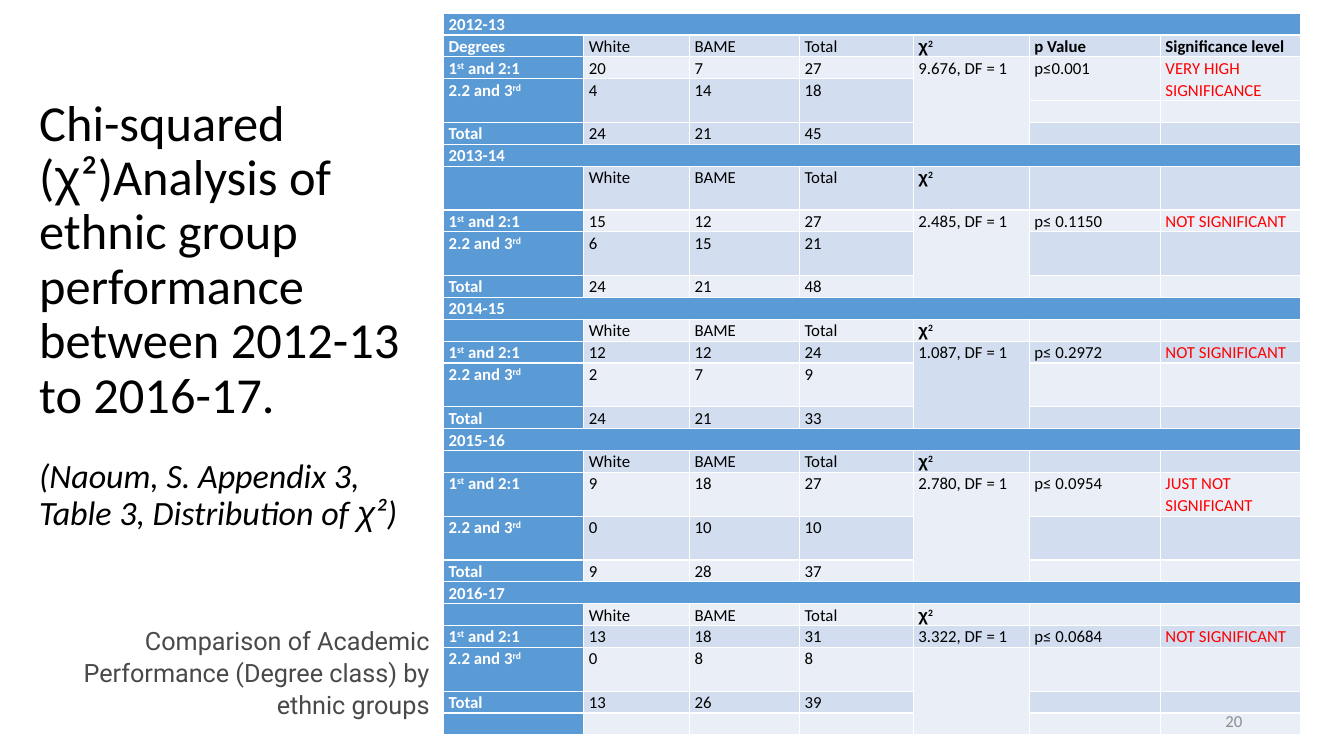
from dataclasses import dataclass
from typing import Any

from pptx import Presentation
from pptx import util as u
from pptx.dml.color import RGBColor
from pptx.enum import text

WHITE = RGBColor(0xFF, 0xFF, 0xFF)
BLACK = RGBColor(0x00, 0x00, 0x00)
BLUE = RGBColor(0x5B, 0x9B, 0xD5)
PALE = RGBColor(0xEA, 0xEF, 0xF7)
SOFT = RGBColor(0xD2, 0xDE, 0xEF)
RED = RGBColor(0xFF, 0x00, 0x00)
GREY = RGBColor(0x8C, 0x8C, 0x8C)
DARK = RGBColor(0x49, 0x49, 0x49)

WIDTHS = [1.39, 1.05, 1.09, 1.13, 1.15, 1.3, 1.39]
TALL = {7, 9, 14, 18, 19, 24}  # rows two lines high
HEIGHT = 7.17
GROUPS = ["White", "BAME", "Total"]
CHI = "χ^2"


@dataclass
class Style:
    size: float
    color: RGBColor
    face: str = "Calibri"
    bold: bool = False
    slant: bool = False
    space: float = 1.07
    align: Any = text.PP_ALIGN.LEFT


@dataclass
class Year:
    name: str
    high: list[int]
    low: list[int]
    total: list[int]
    chi: str
    prob: str
    level: str


YEARS = [
    Year("2012-13", [20, 7, 27], [4, 14, 18], [24, 21, 45],
         "9.676, DF = 1", "p≤0.001", "VERY HIGH SIGNIFICANCE"),
    Year("2013-14", [15, 12, 27], [6, 15, 21], [24, 21, 48],
         "2.485, DF = 1", "p≤ 0.1150", "NOT SIGNIFICANT"),
    Year("2014-15", [12, 12, 24], [2, 7, 9], [24, 21, 33],
         "1.087, DF = 1", "p≤ 0.2972", "NOT SIGNIFICANT"),
    Year("2015-16", [9, 18, 27], [0, 10, 10], [9, 28, 37],
         "2.780, DF = 1", "p≤ 0.0954", "JUST NOT SIGNIFICANT"),
    Year("2016-17", [13, 18, 31], [0, 8, 8], [13, 26, 39],
         "3.322, DF = 1", "p≤ 0.0684", "NOT SIGNIFICANT"),
]


def write(para: Any, words: str, style: Style) -> None:
    """Write words; ^...^ marks superscript, and χ is set in Arial."""
    para.alignment, para.line_spacing = style.align, style.space
    font = para.font
    font.size, font.name = u.Pt(style.size), style.face
    font.bold, font.italic = style.bold, style.slant
    font.color.rgb = style.color
    for i, part in enumerate(words.split("^")):
        for piece in part.replace("χ", "|χ|").split("|"):
            if not piece:
                continue
            run = para.add_run()
            run.text = piece
            if piece == "χ":
                run.font.name = "Arial"
            if i % 2:
                run.font._element.set("baseline", "30000")
    if not words:
        para._p.get_or_add_endParaRPr().set("sz", str(int(style.size * 100)))


def add_box(slide: Any, left: float, top: float, wide: float, high: float,
            anchor: Any) -> Any:
    box = slide.shapes.add_textbox(*map(u.Inches, (left, top, wide, high)))
    frame = box.text_frame
    frame.word_wrap, frame.vertical_anchor = True, anchor
    return frame


def list_rows() -> tuple[list[list[str]], list[tuple[int, int, int, int]]]:
    """Return the table rows and the merges (top, left, bottom, right)."""
    rows: list[list[str]] = []
    spans: list[tuple[int, int, int, int]] = []
    for year in YEARS:
        top = len(rows)
        first, last = year is YEARS[0], year is YEARS[-1]
        spans.append((top, 0, top, 6))
        rows.append([year.name])
        rows.append(["Degrees" if first else "", *GROUPS, CHI]
                    + (["p Value", "Significance level"] if first else []))
        rows.append(["1^st^ and 2:1", *map(str, year.high),
                     year.chi, year.prob, year.level])
        rows.append(["2.2 and 3^rd", *map(str, year.low)])
        if first:
            rows.append([])
            spans += [(top + 3, col, top + 4, col) for col in range(4)]
            spans += [(top + 2, col, top + 3, col) for col in (5, 6)]
        rows.append(["Total", *map(str, year.total)])
        if last:
            rows.append([])
        spans.append((top + 3 if last else top + 2, 4, len(rows) - 1, 4))
    return rows, spans


def add_grid(slide: Any) -> None:
    rows, spans = list_rows()
    grid = slide.shapes.add_table(
        len(rows), len(WIDTHS), u.Inches(4.4), u.Inches(0.13),
        u.Inches(sum(WIDTHS)), u.Inches(HEIGHT)).table
    for col, width in zip(grid.columns, WIDTHS):
        col.width = u.Inches(width)
    unit = HEIGHT / (len(rows) + len(TALL))
    levels = {year.level for year in YEARS}
    bands = {year.name for year in YEARS}
    for r, row in enumerate(rows):
        grid.rows[r].height = u.Inches(unit * (2 if r in TALL else 1))
        band = bool(row) and row[0] in bands
        for c in range(len(WIDTHS)):
            words = row[c] if c < len(row) else ""
            cell = grid.cell(r, c)
            cell.margin_left = cell.margin_right = u.Inches(0.05)
            cell.margin_top = cell.margin_bottom = 0
            cell.fill.solid()
            cell.fill.fore_color.rgb = (
                BLUE if band or c == 0 else SOFT if r % 2 else PALE)
            color = WHITE if c == 0 else RED if words in levels else BLACK
            bold = c == 0 or words in (CHI, "p Value", "Significance level")
            write(cell.text_frame.paragraphs[0], words,
                  Style(12, color, bold=bold))
    for top, left, bottom, right in spans:
        grid.cell(top, left).merge(grid.cell(bottom, right))


def main() -> None:
    deck = Presentation()
    deck.slide_width, deck.slide_height = u.Inches(13.33), u.Inches(7.5)
    slide = deck.slides.add_slide(deck.slide_layouts[6])

    # Title and its reference
    frame = add_box(slide, 0.29, 0.63, 4.08, 4.99, text.MSO_ANCHOR.MIDDLE)
    write(frame.paragraphs[0],
          "Chi-squared (χ²)Analysis of ethnic group performance "
          "between 2012-13 to 2016-17.", Style(36, BLACK, space=0.9))
    note = frame.add_paragraph()
    write(note, "(Naoum, S. Appendix 3, Table 3, Distribution of χ²)",
          Style(24.3, BLACK, slant=True, space=0.9))
    note.space_before, note.space_after = u.Pt(25), u.Pt(78)

    # Results by year
    add_grid(slide)

    # Slide number
    frame = add_box(slide, 9.42, 6.95, 3, 0.4, text.MSO_ANCHOR.MIDDLE)
    write(frame.paragraphs[0], "20",
          Style(12, GREY, space=1.0, align=text.PP_ALIGN.RIGHT))

    # Caption
    frame = add_box(slide, 0.4, 6.13, 3.96, 1.07, text.MSO_ANCHOR.TOP)
    frame.auto_size = text.MSO_AUTO_SIZE.SHAPE_TO_FIT_TEXT
    write(frame.paragraphs[0],
          "Comparison of Academic Performance (Degree class) by ethnic groups",
          Style(18, DARK, "Roboto", align=text.PP_ALIGN.RIGHT))
    frame.paragraphs[0].space_after = u.Pt(8)

    deck.save("out.pptx")


if __name__ == "__main__":
    main()
